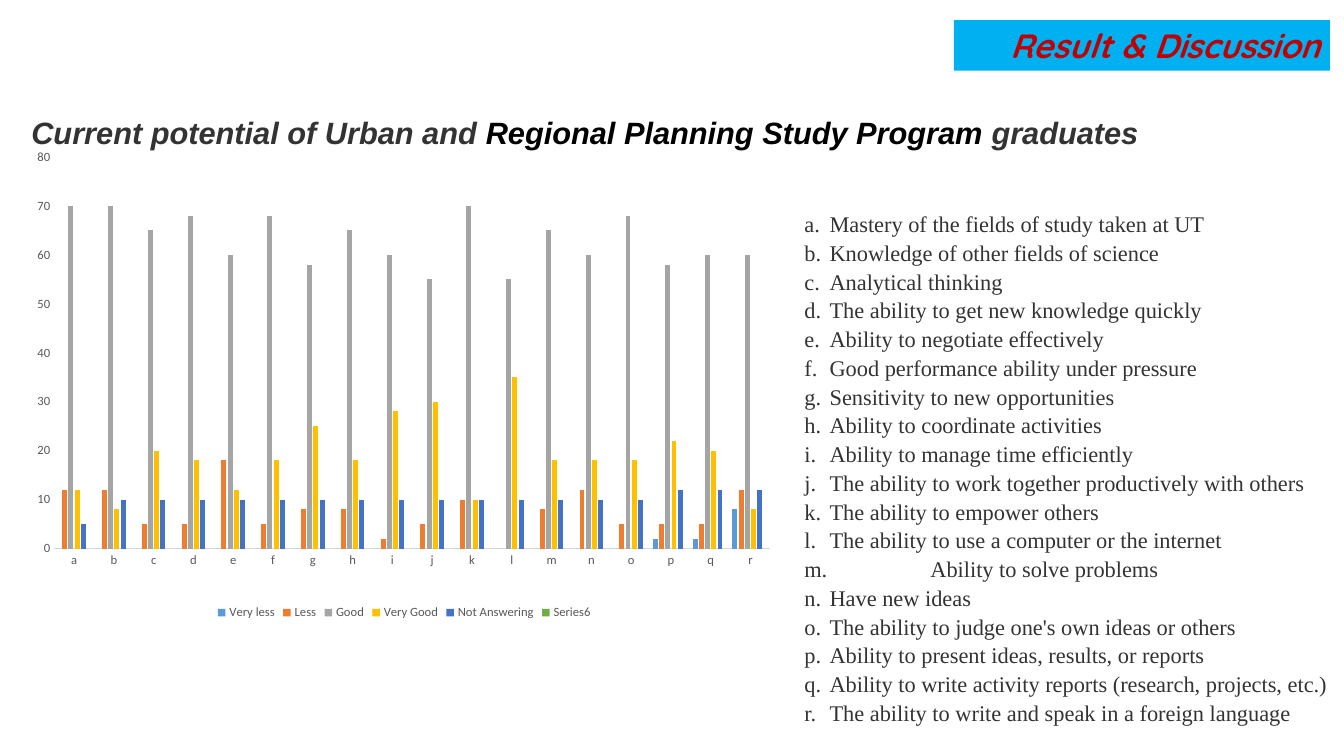
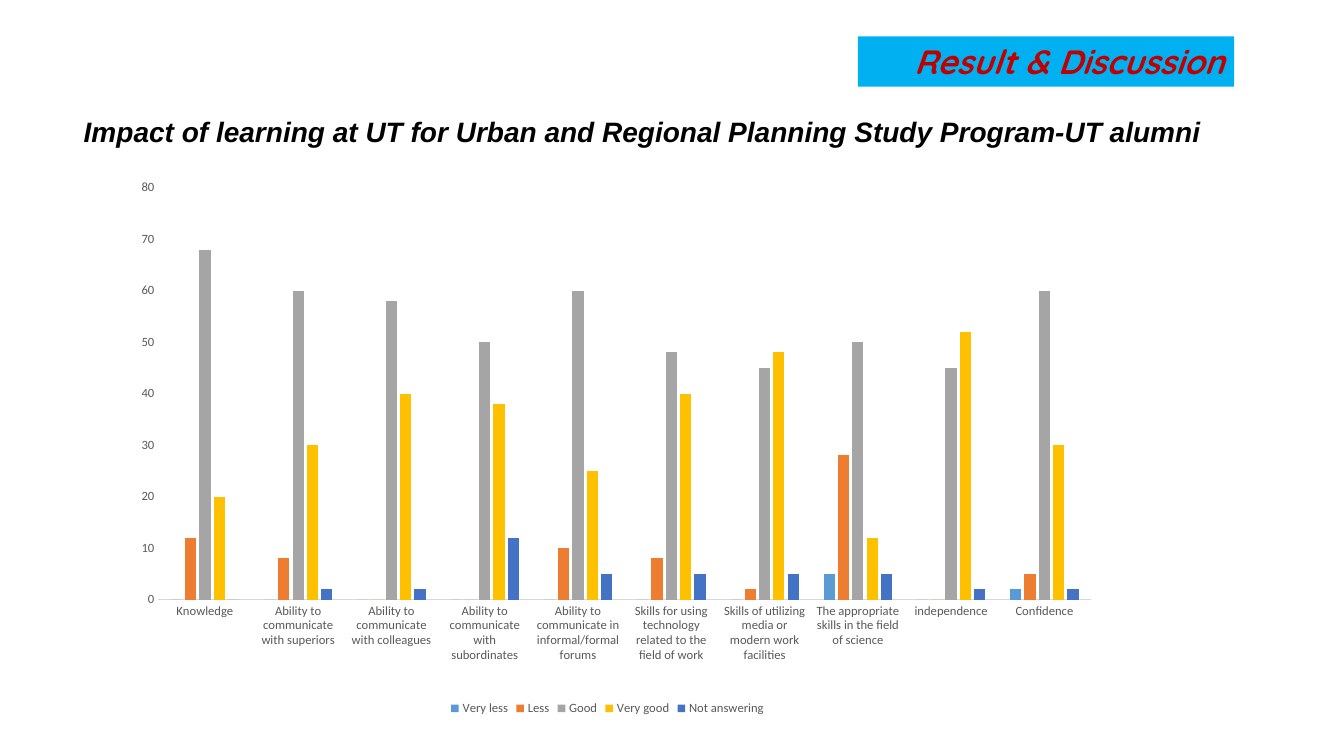
from dataclasses import dataclass

from lxml.etree import SubElement
from pptx import Presentation
from pptx.chart.data import CategoryChartData
from pptx.dml.color import RGBColor
from pptx.enum.chart import XL_CHART_TYPE, XL_LEGEND_POSITION, XL_TICK_MARK
from pptx.enum.shapes import MSO_SHAPE
from pptx.enum.text import MSO_ANCHOR, MSO_AUTO_SIZE, PP_ALIGN
from pptx.oxml.ns import qn
from pptx.util import Inches, Pt


@dataclass(frozen=True)
class Theme:
    ink: str = "000000"
    soft_ink: str = "333333"
    axis_text: str = "595959"
    axis_line: str = "D9D9D9"
    banner: str = "00B0F0"
    banner_text: str = "C00000"
    series: tuple = ("5B9BD5", "ED7D31", "A5A5A5", "FFC000", "4472C4", "70AD47")
    head_font: str = "Arial"
    body_font: str = "Times New Roman"
    banner_font: str = "Quicksand"
    chart_font: str = "Calibri"
    banner_size: float = 24
    body_size: float = 16
    chart_size: float = 9


T = Theme()
SLIDE_W, SLIDE_H = Inches(13.33), Inches(7.5)
BANNER_SIZE = (27.98, 6.67)

ABILITIES = [
    "Mastery of the fields of study taken at UT",
    "Knowledge of other fields of science",
    "Analytical thinking",
    "The ability to get new knowledge quickly",
    "Ability to negotiate effectively",
    "Good performance ability under pressure",
    "Sensitivity to new opportunities",
    "Ability to coordinate activities",
    "Ability to manage time efficiently",
    "The ability to work together productively with others",
    "The ability to empower others",
    "The ability to use a computer or the internet",
    "Ability to solve problems",
    "Have new ideas",
    "The ability to judge one's own ideas or others",
    "Ability to present ideas, results, or reports",
    "Ability to write activity reports (research, projects, etc.)",
    "The ability to write and speak in a foreign language",
]
LETTERS = "abcdefghijklmnopqr"
POTENTIAL = {
    "Very less": [0] * 15 + [2, 2, 8],
    "Less": [12, 12, 5, 5, 18, 5, 8, 8, 2, 5, 10, 0, 8, 12, 5, 5, 5, 12],
    "Good": [70, 70, 65, 68, 60, 68, 58, 65, 60, 55, 70, 55, 65, 60, 68, 58, 60, 60],
    "Very Good": [12, 8, 20, 18, 12, 18, 25, 18, 28, 30, 10, 35, 18, 18, 18, 22, 20, 8],
    "Not Answering": [5] + [10] * 14 + [12] * 3,
    "Series6": [None] * 18,
}

IMPACT_AREAS = [
    "Knowledge",
    "Ability to communicate with superiors",
    "Ability to communicate with colleagues",
    "Ability to communicate with subordinates",
    "Ability to communicate in informal/formal forums",
    "Skills for using technology related to the field of work",
    "Skills of utilizing media or modern work facilities",
    "The appropriate skills in the field of science",
    "independence",
    "Confidence",
]
IMPACT = {
    "Very less": [0, 0, 0, 0, 0, 0, 0, 5, 0, 2],
    "Less": [12, 8, 0, 0, 10, 8, 2, 28, 0, 5],
    "Good": [68, 60, 58, 50, 60, 48, 45, 50, 45, 60],
    "Very good": [20, 30, 40, 38, 25, 40, 48, 12, 52, 30],
    "Not answering": [0, 2, 2, 12, 5, 5, 5, 5, 2, 2],
}


def rgb(color):
    return RGBColor.from_string(color)


def place(box):
    """Turn percentages of the slide into left, top, width, height."""
    x, y, w, h = box
    return [round(SLIDE_W * x / 100), round(SLIDE_H * y / 100),
            round(SLIDE_W * w / 100), round(SLIDE_H * h / 100)]


def set_font(font, name, size, color, bold=False, italic=False):
    font.name, font.size = name, Pt(size)
    font.bold, font.italic = bold, italic
    font.color.rgb = rgb(color)


def add_text(p, text, align=PP_ALIGN.LEFT, spacing=1.0, **fmt):
    p.alignment, p.line_spacing = align, spacing
    r = p.add_run()
    r.text = text
    set_font(r.font, **fmt)


def add_heading(s, box, parts, size, spacing=1.0):
    sp = s.shapes.title
    sp.left, sp.top, sp.width, sp.height = place(box)
    tf = sp.text_frame
    tf.word_wrap, tf.auto_size = True, MSO_AUTO_SIZE.NONE
    tf.vertical_anchor = MSO_ANCHOR.TOP
    for text, color in parts:
        add_text(tf.paragraphs[0], text, spacing=spacing, name=T.head_font,
                 size=size, color=color, bold=True, italic=True)


def add_banner(s, left, top):
    sp = s.shapes.add_shape(MSO_SHAPE.RECTANGLE, *place((left, top, *BANNER_SIZE)))
    sp.shadow.inherit = False
    sp.fill.solid()
    sp.fill.fore_color.rgb = rgb(T.banner)
    sp.line.fill.background()
    tf = sp.text_frame
    tf.word_wrap, tf.vertical_anchor = True, MSO_ANCHOR.TOP
    add_text(tf.paragraphs[0], "Result & Discussion", align=PP_ALIGN.RIGHT,
             name=T.banner_font, size=T.banner_size, color=T.banner_text,
             bold=True, italic=True)


def add_lettered_list(s, box, items):
    tf = s.shapes.add_textbox(*place(box)).text_frame
    tf.word_wrap = True
    for i, (letter, item) in enumerate(zip(LETTERS, items)):
        p = tf.add_paragraph() if i else tf.paragraphs[0]
        add_text(p, f"{letter}. \t{item}", align=PP_ALIGN.JUSTIFY, spacing=1.07,
                 name=T.body_font, size=T.body_size, color=T.soft_ink)
        # Hanging indent and tab step
        pPr = p._p.get_or_add_pPr()
        for key, inches in (("marL", 0.55), ("indent", -0.25), ("defTabSz", 1)):
            pPr.set(key, str(Inches(inches)))


def set_plot_area(chart, shares):
    """Fix the inner plot area as shares of the chart."""
    area = chart._chartSpace.chart.plotArea
    for old in area.findall(qn("c:layout")):
        area.remove(old)
    layout = SubElement(area, qn("c:layout"))
    area.insert(0, layout)
    manual = SubElement(layout, qn("c:manualLayout"))
    values = ["inner", "edge", "edge", *shares]
    for tag, value in zip(("layoutTarget", "xMode", "yMode", "x", "y", "w", "h"), values):
        SubElement(manual, qn(f"c:{tag}")).set("val", str(value))


def add_bar_chart(s, box, cats, series, gap, overlap, plot_area):
    data = CategoryChartData()
    data.categories = cats
    for name, vals in series.items():
        data.add_series(name, vals)
    chart = s.shapes.add_chart(XL_CHART_TYPE.COLUMN_CLUSTERED, *place(box), data).chart
    chart.has_title = False
    set_font(chart.font, T.chart_font, T.chart_size, T.axis_text)

    # Bars
    plot = chart.plots[0]
    plot.gap_width, plot.overlap, plot.vary_by_categories = gap, overlap, False
    for ser, color in zip(plot.series, T.series):
        ser.format.fill.solid()
        ser.format.fill.fore_color.rgb = rgb(color)

    # Axes
    for axis in (chart.category_axis, chart.value_axis):
        axis.major_tick_mark = axis.minor_tick_mark = XL_TICK_MARK.NONE
        axis.has_major_gridlines = False
    line = chart.category_axis.format.line
    line.color.rgb, line.width = rgb(T.axis_line), Pt(0.75)
    scale = chart.value_axis
    scale.format.line.fill.background()
    scale.minimum_scale, scale.maximum_scale, scale.major_unit = 0, 80, 10

    # Legend
    chart.has_legend = True
    chart.legend.position = XL_LEGEND_POSITION.BOTTOM
    chart.legend.include_in_layout = False
    set_plot_area(chart, plot_area)


def potential_slide(s):
    add_bar_chart(s, (1.58, 18.67, 57, 63.87), LETTERS, POTENTIAL, 75, -25,
                  (0.043, 0.033, 0.935, 0.811))
    add_lettered_list(s, (56.86, 26.93, 44.3, 70.27), ABILITIES)
    add_heading(s, (1.58, 14.4, 84.47, 6.27), [
        ("Current potential of Urban and ", T.soft_ink),
        ("Regional Planning Study Program", T.ink),
        (" graduates", T.soft_ink)], size=22)
    add_banner(s, 70.97, 2.67)


def impact_slide(s):
    add_bar_chart(s, (8.55, 22.67, 73.29, 72.53), IMPACT_AREAS, IMPACT, 219, -27,
                  (0.044, 0.03, 0.947, 0.751))
    add_heading(s, (5.48, 14.13, 89.05, 5.87), [
        ("Impact of learning at UT for Urban and Regional Planning "
         "Study Program-UT alumni", T.ink)], size=20, spacing=1.07)
    add_banner(s, 63.84, 4.8)


def main():
    prs = Presentation()
    prs.slide_width, prs.slide_height = SLIDE_W, SLIDE_H
    title_only = prs.slide_layouts[5]
    for build in (potential_slide, impact_slide):
        build(prs.slides.add_slide(title_only))
    prs.save("out.pptx")


if __name__ == "__main__":
    main()
